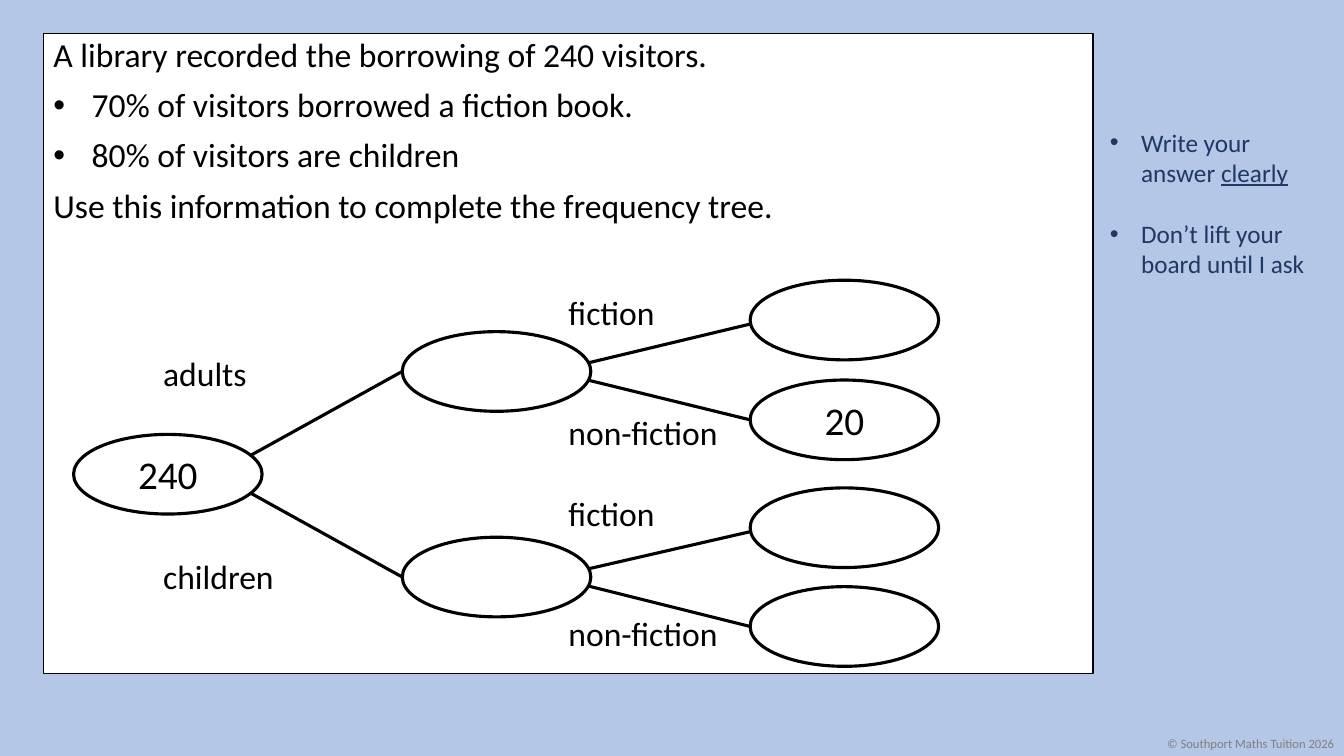
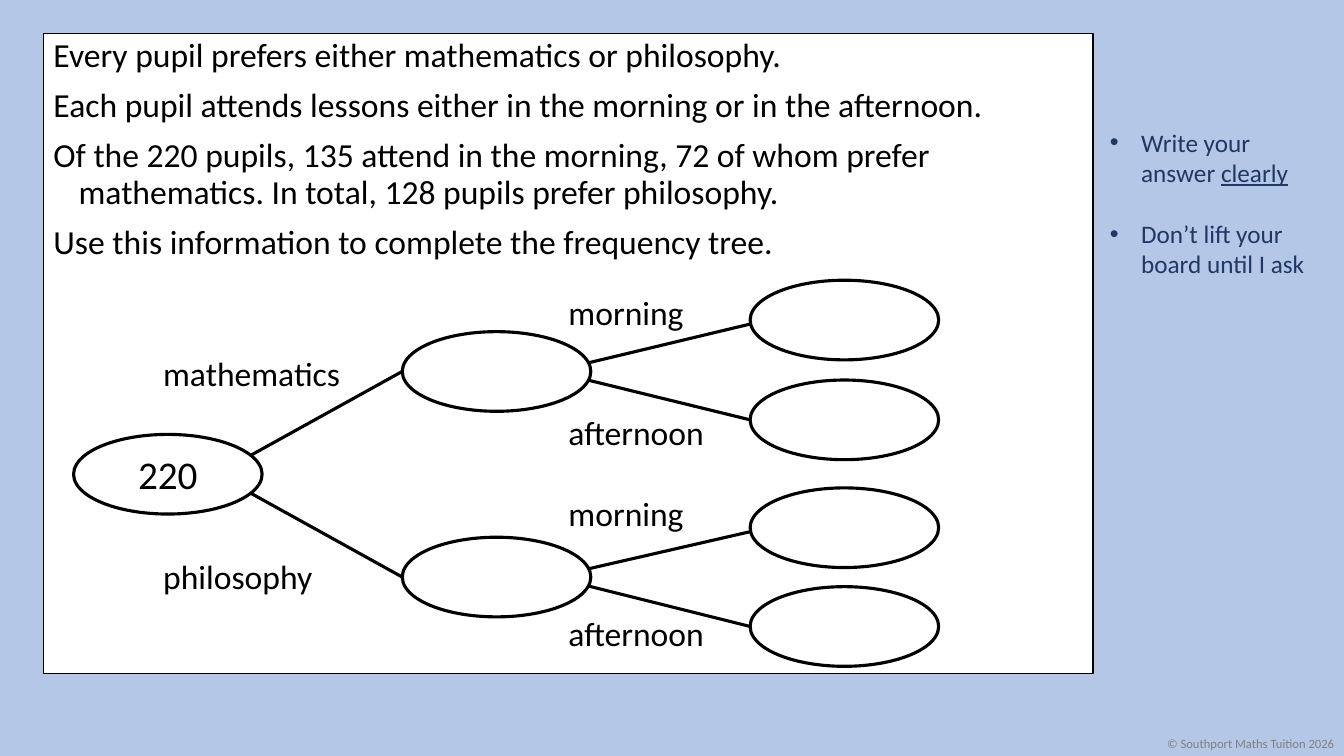
from dataclasses import dataclass

from lxml import etree
from pptx import Presentation
from pptx.dml.color import RGBColor
from pptx.enum.shapes import MSO_CONNECTOR, MSO_SHAPE
from pptx.enum.text import MSO_ANCHOR, MSO_AUTO_SIZE, PP_ALIGN
from pptx.oxml.ns import qn
from pptx.util import Inches, Pt

OVAL = MSO_SHAPE.OVAL
STRAIGHT = MSO_CONNECTOR.STRAIGHT
TOP, MIDDLE = MSO_ANCHOR.TOP, MSO_ANCHOR.MIDDLE
LEFT, CENTER, RIGHT = PP_ALIGN.LEFT, PP_ALIGN.CENTER, PP_ALIGN.RIGHT
NO_AUTOFIT = MSO_AUTO_SIZE.NONE
CONTENT_LAYOUT = 1


@dataclass(frozen=True)
class Theme:
    font: str = "Calibri"
    background: RGBColor = RGBColor(0xB4, 0xC7, 0xE7)
    panel: RGBColor = RGBColor(0xFF, 0xFF, 0xFF)
    ink: RGBColor = RGBColor(0x00, 0x00, 0x00)
    reminder: RGBColor = RGBColor(0x20, 0x38, 0x64)
    footer: RGBColor = RGBColor(0x80, 0x80, 0x80)
    body_size: Pt = Pt(24)
    node_size: Pt = Pt(28)
    reminder_size: Pt = Pt(18)
    footer_size: Pt = Pt(9)
    panel_line: Pt = Pt(1)
    tree_line: Pt = Pt(2.25)


THEME = Theme()

# Tree geometry, in inches
NODE_W, NODE_H = 1.87, 0.79
NODES = {
    "root": (0.73, 4.31),
    "upper": (3.99, 3.29),
    "lower": (3.99, 5.33),
    "upper first": (7.44, 2.78),
    "upper second": (7.44, 3.77),
    "lower first": (7.44, 4.84),
    "lower second": (7.44, 5.82),
}
BRANCH_INSET = 0.38
# Parent, child, vertical shift at the start and at the end
BRANCHES = [
    ("root", "upper", -0.04, 0),
    ("root", "lower", 0.04, 0),
    ("upper", "upper first", 0, 0.04),
    ("upper", "upper second", 0, 0),
    ("lower", "lower first", 0, 0.04),
    ("lower", "lower second", 0, 0),
]
GROUP_LABELS = [(1.52, 3.45), (1.52, 5.47)]
OUTCOME_LABELS = [(5.54, 2.85), (5.54, 4.04), (5.54, 4.84), (5.54, 6.03)]

REMINDERS = [["Write your answer ", "_clearly"], ["Don’t lift your board until I ask"]]
FOOTER = "© Southport Maths Tuition 2026"
INSTRUCTION = ("Use this information to complete the frequency tree.", False)

# Question lines are (text, bulleted)
QUESTIONS = [
    {
        "lines": [
            ("A library recorded the borrowing of 240 visitors.", False),
            ("70% of visitors borrowed a fiction book.", True),
            ("80% of visitors are children", True),
            INSTRUCTION,
        ],
        "groups": ["adults", "children"],
        "outcomes": ["fiction", "non-fiction"],
        "values": {"root": "240", "upper second": "20"},
    },
    {
        "lines": [
            ("Every pupil prefers either mathematics or philosophy.", False),
            ("Each pupil attends lessons either in the morning or in the afternoon.", False),
            ("Of the 220 pupils, 135 attend in the morning, 72 of whom prefer "
             "mathematics. In total, 128 pupils prefer philosophy.", False),
            INSTRUCTION,
        ],
        "groups": ["mathematics", "philosophy"],
        "outcomes": ["morning", "afternoon"],
        "values": {"root": "220"},
    },
]


def apply_format(target, values):
    for name, value in values.items():
        setattr(target, name, value)


def add_run(paragraph, text, size, color, underline=False):
    run = paragraph.add_run()
    run.text = text
    apply_format(run.font, {"name": THEME.font, "size": size, "underline": underline})
    run.font.color.rgb = color


def set_indent(paragraph, hang, bulleted):
    properties = paragraph._p.get_or_add_pPr()
    properties.set("marL", str(Inches(hang)))
    properties.set("indent", str(-Inches(hang)))
    if bulleted:
        etree.SubElement(properties, qn("a:buFont")).set("typeface", "Arial")
        etree.SubElement(properties, qn("a:buChar")).set("char", "•")
    else:
        etree.SubElement(properties, qn("a:buNone"))


def next_paragraph(frame, index):
    return frame.add_paragraph() if index else frame.paragraphs[0]


def add_text_box(slide, left, top, width, height):
    box = slide.shapes.add_textbox(Inches(left), Inches(top), Inches(width), Inches(height))
    box.text_frame.word_wrap = True
    return box.text_frame


def add_label(slide, text, left, top):
    frame = add_text_box(slide, left, top, 2.1, 0.5)
    add_run(frame.paragraphs[0], text, THEME.body_size, THEME.ink)


def set_outline(shape, width):
    shape.fill.solid()
    shape.fill.fore_color.rgb = THEME.panel
    shape.line.color.rgb = THEME.ink
    shape.line.width = width


def fill_question(panel, lines):
    apply_format(panel, {"left": Inches(0.43), "top": Inches(0.33),
                         "width": Inches(10.41), "height": Inches(6.35)})
    set_outline(panel, THEME.panel_line)
    frame = panel.text_frame
    apply_format(frame, {"word_wrap": True, "auto_size": NO_AUTOFIT, "vertical_anchor": TOP})
    for index, (text, bulleted) in enumerate(lines):
        paragraph = next_paragraph(frame, index)
        set_indent(paragraph, 0.38 if bulleted else 0.25, bulleted)
        apply_format(paragraph, {"alignment": LEFT, "line_spacing": 0.9,
                                 "space_before": Pt(10 if index else 0)})
        add_run(paragraph, text, THEME.body_size, THEME.ink)


def add_branch(slide, parent, child, start_shift, end_shift):
    parent_left, parent_top = NODES[parent]
    child_left, child_top = NODES[child]
    branch = slide.shapes.add_connector(
        STRAIGHT,
        Inches(parent_left + NODE_W - BRANCH_INSET),
        Inches(parent_top + NODE_H / 2 + start_shift),
        Inches(child_left),
        Inches(child_top + NODE_H / 2 + end_shift),
    )
    branch.line.color.rgb = THEME.ink
    branch.line.width = THEME.tree_line
    etree.SubElement(branch._element.spPr, qn("a:effectLst"))


def add_node(slide, left, top, value):
    node = slide.shapes.add_shape(OVAL, Inches(left), Inches(top), Inches(NODE_W), Inches(NODE_H))
    node.shadow.inherit = False
    set_outline(node, THEME.tree_line)
    if value:
        frame = node.text_frame
        apply_format(frame, {"vertical_anchor": MIDDLE,
                             "margin_left": Inches(0.04), "margin_right": Inches(0.04),
                             "margin_top": 0, "margin_bottom": 0})
        frame.paragraphs[0].alignment = CENTER
        add_run(frame.paragraphs[0], value, THEME.node_size, THEME.ink)


def add_tree(slide, question):
    # Branches lie behind the nodes
    for branch in BRANCHES:
        add_branch(slide, *branch)
    for name, position in NODES.items():
        add_node(slide, *position, question["values"].get(name))
    for text, position in zip(question["groups"], GROUP_LABELS):
        add_label(slide, text, *position)
    for text, position in zip(question["outcomes"] * 2, OUTCOME_LABELS):
        add_label(slide, text, *position)


def add_reminders(slide):
    frame = add_text_box(slide, 10.91, 1.21, 2.32, 1.62)
    for index, parts in enumerate(REMINDERS):
        paragraph = next_paragraph(frame, index)
        set_indent(paragraph, 0.31, True)
        paragraph.space_before = Pt(22 if index else 0)
        for part in parts:
            add_run(paragraph, part.lstrip("_"), THEME.reminder_size, THEME.reminder,
                    underline=part.startswith("_"))


def add_footer(slide):
    paragraph = add_text_box(slide, 10.83, 7.25, 2.5, 0.25).paragraphs[0]
    paragraph.alignment = RIGHT
    add_run(paragraph, FOOTER, THEME.footer_size, THEME.footer)


def add_question_slide(prs, question):
    slide = prs.slides.add_slide(prs.slide_layouts[CONTENT_LAYOUT])
    # The question fills the whole panel, so no title is kept
    heading = slide.shapes.title._element
    heading.getparent().remove(heading)
    fill_question(slide.placeholders[1], question["lines"])
    add_tree(slide, question)
    add_reminders(slide)
    add_footer(slide)


def main():
    prs = Presentation()
    apply_format(prs, {"slide_width": Inches(13.33), "slide_height": Inches(7.5)})
    backdrop = prs.slide_master.background.fill
    backdrop.solid()
    backdrop.fore_color.rgb = THEME.background
    for question in QUESTIONS:
        add_question_slide(prs, question)
    prs.save("out.pptx")


if __name__ == "__main__":
    main()
